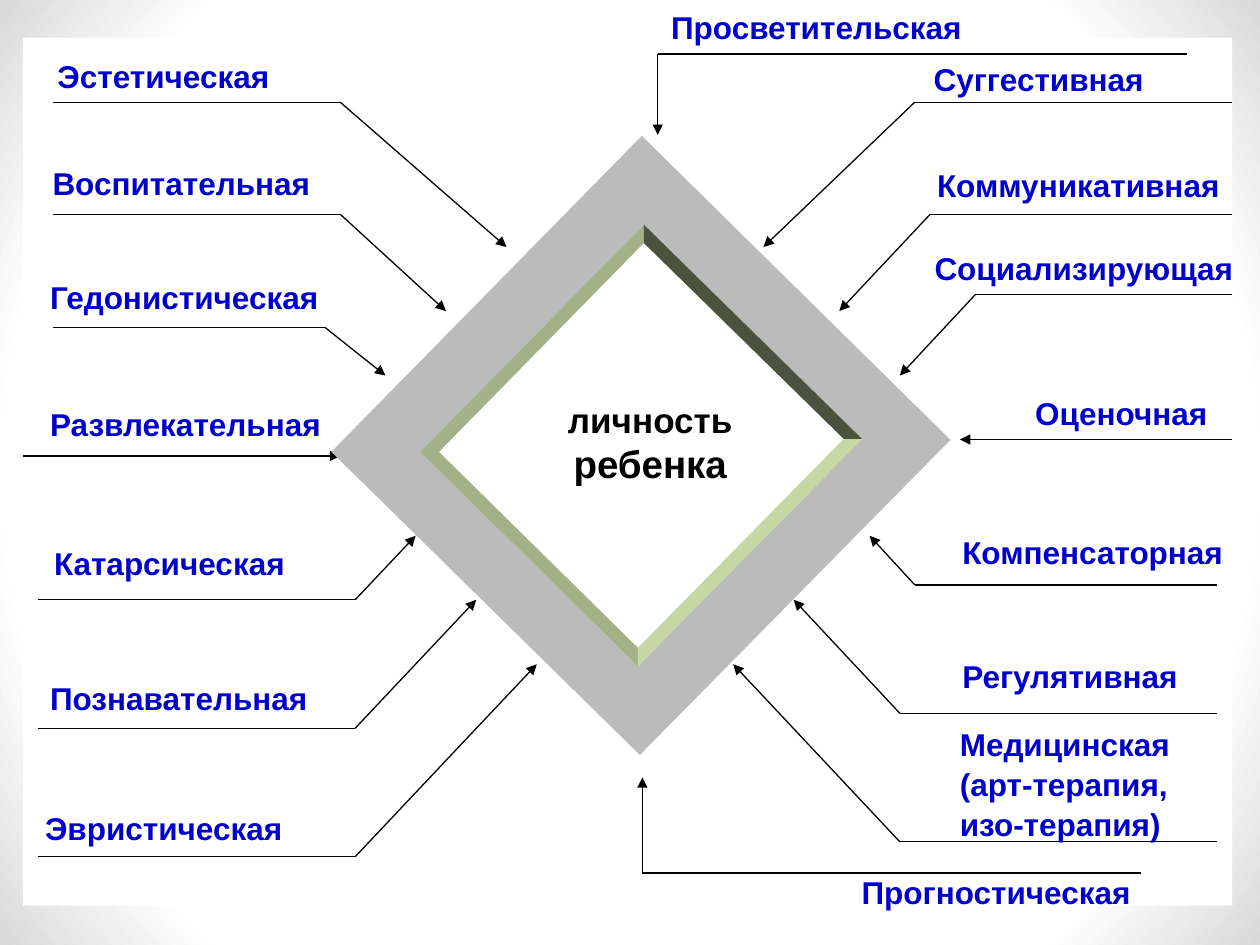
from lxml import etree
from pptx import Presentation
from pptx.dml.color import RGBColor
from pptx.enum.shapes import MSO_CONNECTOR, MSO_SHAPE
from pptx.enum.text import MSO_ANCHOR, PP_ALIGN
from pptx.oxml import parse_xml
from pptx.oxml.ns import nsdecls, qn
from pptx.util import Cm, Pt

RECT = MSO_SHAPE.RECTANGLE
STRAIGHT = MSO_CONNECTOR.STRAIGHT
TOP = MSO_ANCHOR.TOP
CENTER = PP_ALIGN.CENTER

WHITE = RGBColor(0xFF, 0xFF, 0xFF)
BLACK = RGBColor(0, 0, 0)
BLUE = RGBColor(0, 0, 0xCC)
GRAY = RGBColor(0xBB, 0xBB, 0xBB)
SAGE = RGBColor(0xA3, 0xB1, 0x88)
LIGHT_GREEN = RGBColor(0xC5, 0xD8, 0xA4)
DARK_GREEN = RGBColor(0x4B, 0x52, 0x3E)

FONT = "Arial"
SLIDE_W, SLIDE_H = 25.4, 19.05
PANEL = (0.46, 0.76, 24.38, 17.5)

LABELS = [
    ("Просветительская", 13.28, 0.03, 6.55),
    ("Эстетическая", 0.91, 1.02, 6.43),
    ("Воспитательная", 0.81, 3.18, 5.97),
    ("Гедонистическая", 0.76, 5.49, 6.35),
    ("Развлекательная", 0.76, 8.05, 6.15),
    ("Катарсическая", 0.84, 10.85, 5.72),
    ("Познавательная", 0.76, 13.56, 5.72),
    ("Эвристическая", 0.66, 16.18, 6.55),
    ("Суггестивная", 18.57, 1.09, 5.72),
    ("Коммуникативная", 18.64, 3.23, 6.55),
    ("Социализирующая", 18.59, 4.9, 6.78),
    ("Оценочная", 20.62, 7.82, 4.01),
    ("Компенсаторная", 19.15, 10.62, 6.55),
    ("Регулятивная", 19.15, 13.13, 6.55),
    ("Медицинская\n(арт-терапия,\nизо-терапия)", 19.1, 14.5, 6.1),
    ("Прогностическая", 17.12, 17.48, 6.35),
]

CALLOUTS = [
    [(13.26, 2.72), (13.26, 1.09), (23.93, 1.09)],
    [(12.95, 15.67), (12.95, 17.6), (23.01, 17.6)],
    [(6.86, 9.19), (0.46, 9.19)],
    [(19.35, 8.86), (24.84, 8.86)],
    [(10.21, 4.98), (6.86, 2.06), (1.07, 2.06)],
    [(8.99, 6.27), (6.86, 4.32), (1.07, 4.32)],
    [(7.77, 7.57), (6.55, 6.6), (1.07, 6.6)],
    [(8.38, 10.8), (7.16, 12.09), (0.76, 12.09)],
    [(9.6, 12.09), (7.16, 14.68), (0.76, 14.68)],
    [(10.82, 13.39), (7.16, 17.27), (0.76, 17.27)],
    [(10.82, 13.72), (10.82, 13.72)],
    [(15.39, 4.98), (18.44, 2.06), (24.84, 2.06)],
    [(16.92, 6.27), (18.75, 4.32), (24.84, 4.32)],
    [(18.14, 7.57), (19.66, 5.94), (24.84, 5.94)],
    [(17.53, 10.8), (18.44, 11.79), (24.54, 11.79)],
    [(16, 12.09), (18.14, 14.38), (24.54, 14.38)],
    [(14.78, 13.39), (18.14, 16.97), (24.54, 16.97)],
]

OUTER = [(12.94, 2.74), (6.68, 9.11), (12.9, 15.22), (19.16, 8.87)]
INNER = [(12.98, 4.53), (8.47, 9.11), (12.86, 13.43), (17.38, 8.85)]
CORE = [(12.98, 4.9), (8.85, 9.11), (12.86, 13.06), (17.01, 8.85)]
BEVELS = [SAGE, SAGE, LIGHT_GREEN, DARK_GREEN]

CENTRE = [("личность", 20), ("ребенка", 22)]

prs = Presentation()
prs.slide_width, prs.slide_height = Cm(SLIDE_W), Cm(SLIDE_H)
s = prs.slides.add_slide(prs.slide_layouts[6])


def paint(sp, color):
    sp.shadow.inherit = False
    sp.line.fill.background()
    sp.fill.solid()
    sp.fill.fore_color.rgb = color


def add_rect(x, y, w, h):
    sp = s.shapes.add_shape(RECT, Cm(x), Cm(y), Cm(w), Cm(h))
    paint(sp, WHITE)
    return sp


def add_outline(color, *rings):
    fb = s.shapes.build_freeform(Cm(rings[0][0][0]), Cm(rings[0][0][1]))
    for i, ring in enumerate(rings):
        if i:
            fb.move_to(Cm(ring[0][0]), Cm(ring[0][1]))
        fb.add_line_segments([(Cm(x), Cm(y)) for x, y in ring[1:]], close=True)
    paint(fb.convert_to_shape(), color)


def add_line(start, end, arrow):
    c = s.shapes.add_connector(STRAIGHT, *(Cm(v) for v in start + end))
    c.line.color.rgb = BLACK
    c.line.width = Pt(0.75)
    if arrow:
        ln = c.line._get_or_add_ln()
        etree.SubElement(ln, qn("a:headEnd"), type="triangle")
    etree.SubElement(c._element.spPr, qn("a:effectLst"))


def add_run(p, text, size, color):
    r = p.add_run()
    r.text = text
    r.font.name, r.font.size, r.font.bold = FONT, Pt(size), True
    r.font.color.rgb = color


def add_label(text, x, y, w):
    lines = text.split("\n")
    h = 0.25 + 0.77 * len(lines)
    tf = s.shapes.add_textbox(Cm(x), Cm(y), Cm(w), Cm(h)).text_frame
    tf.word_wrap = True
    for i, line in enumerate(lines):
        p = tf.add_paragraph() if i else tf.paragraphs[0]
        if i:
            p.space_before = Pt(1)
        add_run(p, line, 18, BLUE)


backdrop = add_rect(0, 0, SLIDE_W, SLIDE_H)
solid = backdrop._element.spPr.find(qn("a:solidFill"))
solid.getparent().replace(solid, parse_xml(
    f'<a:gradFill {nsdecls("a")} rotWithShape="1"><a:gsLst>'
    '<a:gs pos="0"><a:srgbClr val="FFFFFF"/></a:gs>'
    '<a:gs pos="79000"><a:srgbClr val="FFFFFF"/></a:gs>'
    '<a:gs pos="100000"><a:srgbClr val="D9D9D9"/></a:gs></a:gsLst>'
    '<a:path path="circle"><a:fillToRect l="50000" t="50000" r="50000" b="50000"/>'
    '</a:path></a:gradFill>'))
add_rect(*PANEL)

for points in CALLOUTS:
    for i, (start, end) in enumerate(zip(points, points[1:])):
        add_line(start, end, arrow=i == 0)

add_outline(GRAY, OUTER, INNER)
for i, color in enumerate(BEVELS):
    j = (i + 1) % len(BEVELS)
    add_outline(color, [INNER[i], INNER[j], CORE[j], CORE[i]])

tf = add_rect(11.13, 7.9, 3.96, 2.59).text_frame
tf.word_wrap = True
tf.vertical_anchor = TOP
for i, (text, size) in enumerate(CENTRE):
    p = tf.add_paragraph() if i else tf.paragraphs[0]
    p.alignment = CENTER
    add_run(p, text, size, BLACK)

for label in LABELS:
    add_label(*label)

prs.save("out.pptx")
